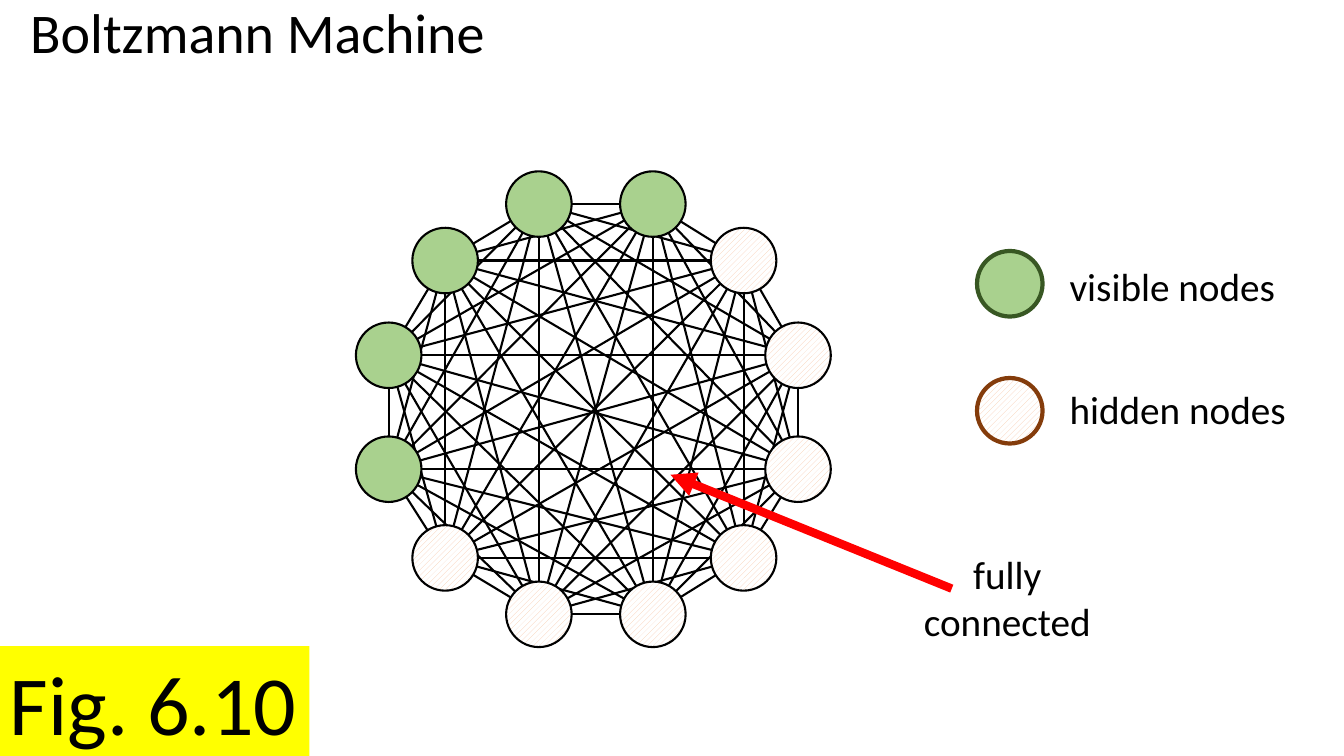
from itertools import combinations

from lxml.etree import SubElement
from pptx import Presentation
from pptx.dml.color import RGBColor
from pptx.enum.dml import MSO_PATTERN
from pptx.enum.shapes import MSO_CONNECTOR, MSO_SHAPE
from pptx.enum.text import MSO_ANCHOR, PP_ALIGN
from pptx.oxml.ns import qn
from pptx.util import Inches, Pt

BLACK = "000000"
NODE = 0.65
COLUMNS = [0, 0.56, 1.49, 2.62, 3.52, 4.06]
ROWS = [0, 0.56, 1.5, 2.63, 3.51, 4.07]
RING = [2, 3, 4, 5, 5, 4, 3, 2, 1, 0, 0, 1]
VISIBLE = {0, 1, 9, 10, 11}


def color(value):
    return RGBColor.from_string(value)


def format_text(tf, text, size, align=PP_ALIGN.LEFT):
    tf.text = text
    p = tf.paragraphs[0]
    p.alignment = align
    p.font.name = "Calibri"
    p.font.size = Pt(size)
    p.font.color.rgb = color(BLACK)
    return p


def add_text(shapes, left, top, width, height, text, size, align=PP_ALIGN.LEFT):
    sp = shapes.add_textbox(Inches(left), Inches(top), Inches(width), Inches(height))
    sp.text_frame.word_wrap = False
    format_text(sp.text_frame, text, size, align)
    return sp


def add_line(shapes, start, end, line_color, width):
    cxn = shapes.add_connector(MSO_CONNECTOR.STRAIGHT, *map(Inches, start + end))
    cxn.line.color.rgb = color(line_color)
    cxn.line.width = Pt(width)
    SubElement(cxn._element.spPr, qn("a:effectLst"))
    return cxn


def add_node(shapes, left, top, visible, line_color=BLACK, width=1.5):
    sp = shapes.add_shape(MSO_SHAPE.OVAL, Inches(left), Inches(top), Inches(NODE), Inches(NODE))
    sp.shadow.inherit = False
    if visible:
        sp.fill.solid()
        sp.fill.fore_color.rgb = color("A9D18E")
    else:
        sp.fill.patterned()
        sp.fill.pattern = MSO_PATTERN.WIDE_UPWARD_DIAGONAL
        sp.fill.fore_color.rgb = color("F8CBAD")
        sp.fill.back_color.rgb = color("FFFFFF")
    sp.line.color.rgb = color(line_color)
    sp.line.width = Pt(width)
    return sp


def add_title(s, left, top, width, height):
    sp = s.shapes.title
    sp.left, sp.top, sp.width, sp.height = map(Inches, (left, top, width, height))
    sp.text_frame.vertical_anchor = MSO_ANCHOR.TOP
    p = format_text(sp.text_frame, "Boltzmann Machine", 40)
    p.line_spacing = 0.9


def add_network(s, left, top):
    shapes = s.shapes.add_group_shape().shapes
    corners = [(left + COLUMNS[col], top + ROWS[row])
               for col, row in zip(RING, RING[-3:] + RING[:-3])]
    centers = [(x + NODE / 2, y + NODE / 2) for x, y in corners]
    for start, end in combinations(centers, 2):
        add_line(shapes, start, end, BLACK, 1.5)
    for i, (x, y) in enumerate(corners):
        add_node(shapes, x, y, i in VISIBLE).rotation = 15.5


def add_legend(s, left, top):
    entries = [("visible nodes", True, "385723", 0, 0.06),
               ("hidden nodes", False, "843C0B", 1.26, 1.28)]
    for text, visible, outline, node_top, text_top in entries:
        add_node(s.shapes, left, top + node_top, visible, outline, 3)
        add_text(s.shapes, left + 0.82, top + text_top, 2.37, 0.57, text, 28)


def add_callout(s, left, top):
    arrow = add_line(s.shapes, (left + 0.39, top + 0.43), (left - 2.4, top - 0.7), "FF0000", 6)
    SubElement(arrow.line._get_or_add_ln(), qn("a:tailEnd"), type="triangle")
    add_text(s.shapes, left, top, 1.88, 1.04, "fully\vconnected", 28, PP_ALIGN.CENTER)


def add_figure_label(s, left, top, width, height):
    sp = add_text(s.shapes, left, top, width, height, "Fig. 6.10", 60)
    sp.fill.solid()
    sp.fill.fore_color.rgb = color("FFFF00")


def main():
    prs = Presentation()
    prs.slide_width, prs.slide_height = Inches(13.33), Inches(7.5)
    s = prs.slides.add_slide(prs.slide_layouts[5])
    add_network(s, 3.53, 1.7)
    add_legend(s, 9.69, 2.49)
    add_callout(s, 9.05, 5.41)
    add_figure_label(s, 0, 6.41, 3.07, 1.11)
    add_title(s, 0.2, 0, 12.77, 1.71)
    prs.save("out.pptx")


if __name__ == "__main__":
    main()
